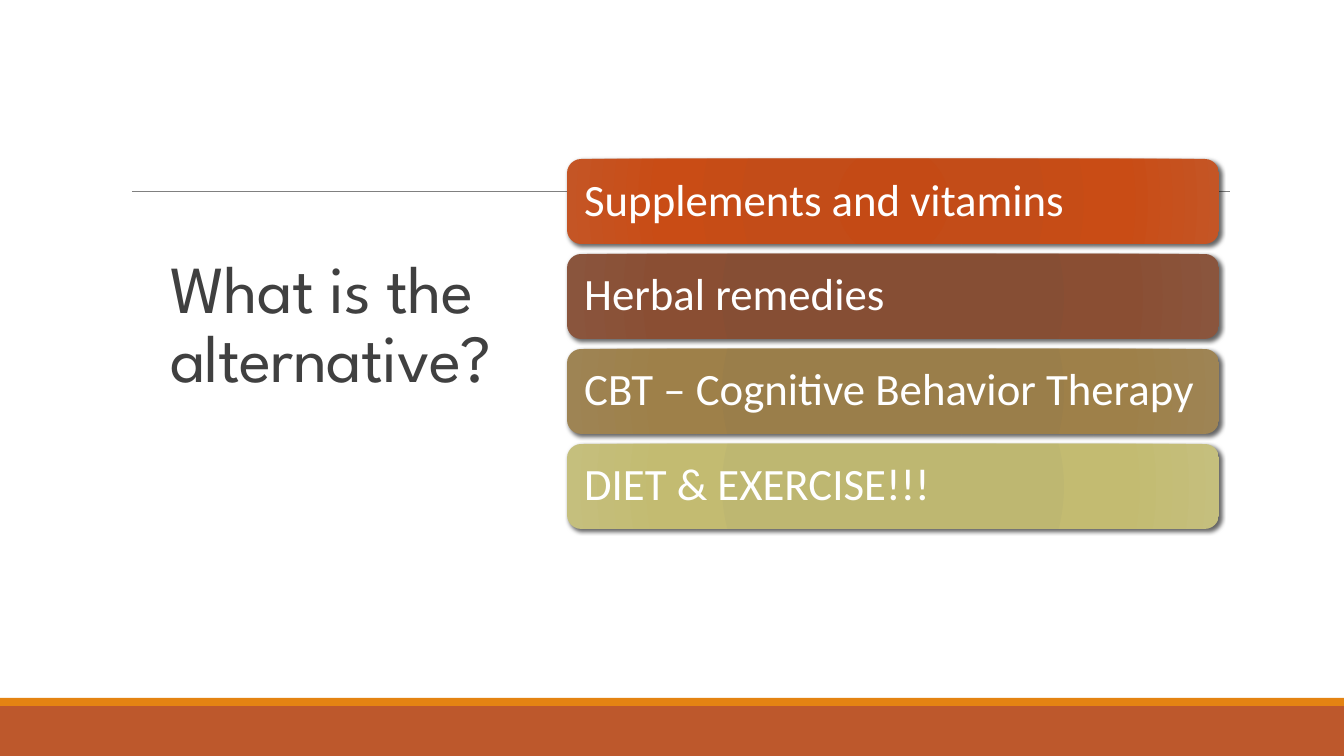
import pptx
import pptx.util
import pptx.dml.color
import pptx.enum.shapes
import pptx.enum.text
import pptx.oxml
import pptx.oxml.ns

SCALE = 914400 / 100.8
NS = pptx.oxml.ns.nsdecls("a")
KIND = pptx.enum.shapes.MSO_SHAPE
ANCHOR = pptx.enum.text.MSO_ANCHOR


def px(*nums):
    return [round(n * SCALE) for n in nums]


def color(text):
    return pptx.dml.color.RGBColor.from_string(text)


deck = pptx.Presentation()
deck.slide_width, deck.slide_height = px(1344, 756)
slide = deck.slides.add_slide(deck.slide_layouts[5])
shapes = slide.shapes

# Footer bands
for top, high, tint in [(706, 50, "BD582C"), (698, 8, "E48312")]:
    band = shapes.add_shape(KIND.RECTANGLE, *px(0, top, 1344, high))
    band.shadow.inherit = False
    band.fill.solid()
    band.fill.fore_color.rgb = color(tint)
    band.line.fill.background()

# Thin rule
rule = shapes.add_connector(pptx.enum.shapes.MSO_CONNECTOR.STRAIGHT,
                            *px(132, 191, 1230, 191))
rule.line.color.rgb = color("808080")
rule.line.width = pptx.util.Pt(0.5)
rule._element.spPr.append(pptx.oxml.parse_xml(f"<a:effectLst {NS}/>"))

# Title
title = shapes.title
title.left, title.top, title.width, title.height = px(160, 254, 361, 294)
frame = title.text_frame
frame.text = "What is the alternative?"
frame.word_wrap = True
frame.auto_size = pptx.enum.text.MSO_AUTO_SIZE.NONE
frame.vertical_anchor = ANCHOR.TOP
para = frame.paragraphs[0]
para.alignment = pptx.enum.text.PP_ALIGN.LEFT
para.line_spacing = 0.85
run = para.runs[0]
run.font.name = "League Spartan"
run.font.size = pptx.util.Pt(48)
run.font.color.rgb = color("404040")
run.font._element.set("spc", "-50")

# Stacked bars: text and gradient colours from centre to edge
bars = [
    ("Supplements and vitamins", ["C44A15", "C34C18", "C94C15", "C45525"]),
    ("Herbal remedies", ["874C32", "864E34", "8A4E33", "8A553D"]),
    ("CBT – Cognitive Behavior Therapy",
     ["9A7D48", "9A7E4A", "9E8049", "9E8454"]),
    ("DIET & EXERCISE!!!", ["BEB76E", "BEB771", "C3BB71", "C5BF7D"]),
]
for row, (text, tints) in enumerate(bars):
    bar = shapes.add_shape(KIND.ROUNDED_RECTANGLE,
                           *px(567, 159 + 95 * row, 652, 85))
    bar.line.fill.background()
    bar.shadow.inherit = False

    # Radial fill and soft shadow
    stops = "".join(
        f'<a:gs pos="{pos}000"><a:srgbClr val="{tint}"/></a:gs>'
        for pos, tint in zip([0, 34, 70, 100], tints))
    props = bar._element.spPr
    props.find(pptx.oxml.ns.qn("a:prstGeom")).addnext(pptx.oxml.parse_xml(
        f'<a:gradFill {NS} rotWithShape="1"><a:gsLst>{stops}</a:gsLst>'
        '<a:path path="circle"><a:fillToRect l="100000" t="100000" '
        'r="100000" b="100000"/></a:path></a:gradFill>'))
    props.find(pptx.oxml.ns.qn("a:effectLst")).append(pptx.oxml.parse_xml(
        f'<a:outerShdw {NS} blurRad="38100" dist="25400" dir="2700000" '
        'rotWithShape="0"><a:srgbClr val="000000"><a:alpha val="60000"/>'
        '</a:srgbClr></a:outerShdw>'))

    # Label
    frame = bar.text_frame
    frame.text = text
    frame.word_wrap = True
    frame.vertical_anchor = ANCHOR.MIDDLE
    frame.margin_left, frame.margin_right = px(13, 13)
    frame.margin_top, frame.margin_bottom = px(13, 13)
    para = frame.paragraphs[0]
    para.alignment = pptx.enum.text.PP_ALIGN.LEFT
    para.line_spacing = 0.9
    font = para.runs[0].font
    font.name = "Calibri"
    font.size = pptx.util.Pt(32)
    font.color.rgb = color("FFFFFF")

deck.save("out.pptx")
